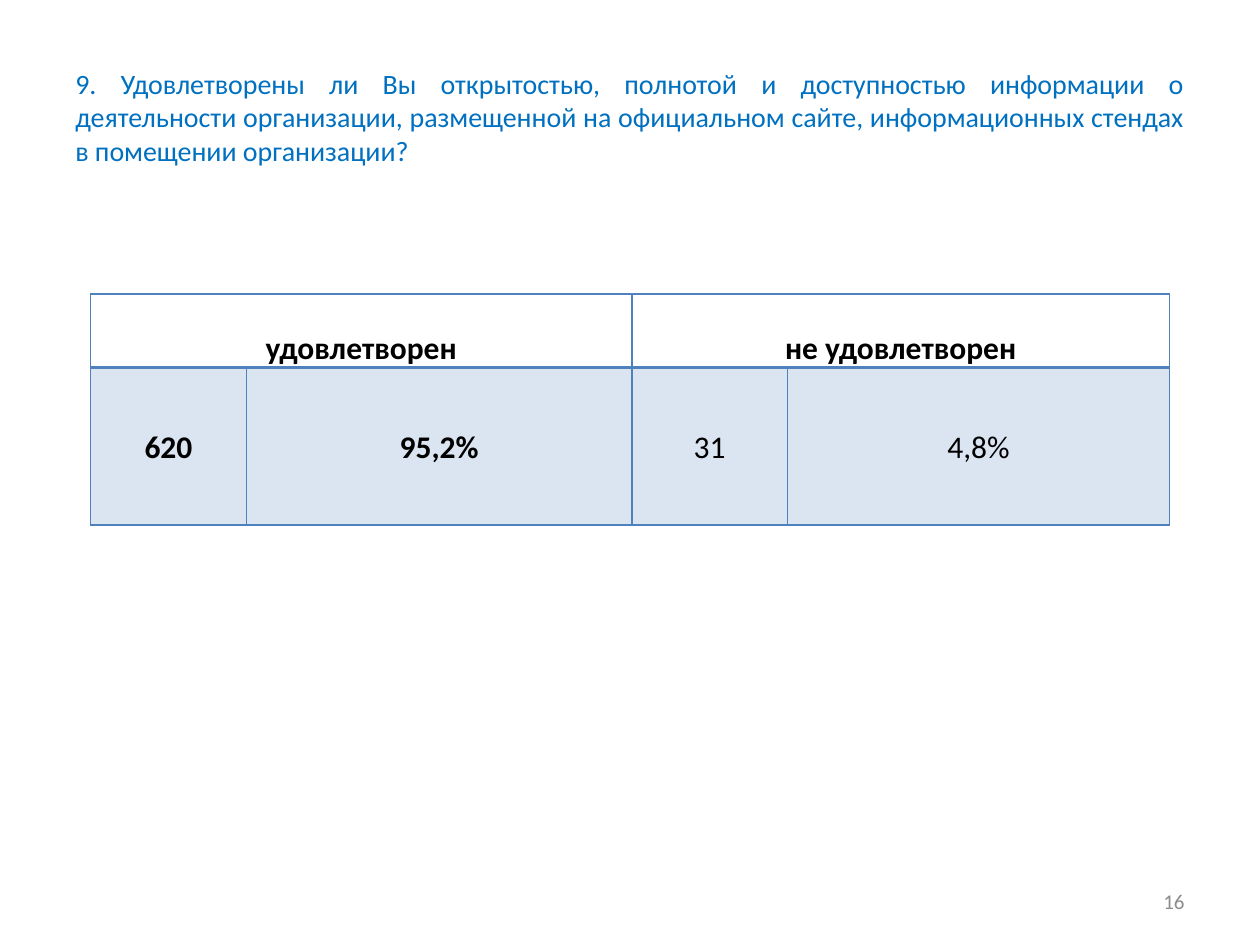
from lxml import etree
from pptx import Presentation
from pptx.dml.color import RGBColor
from pptx.enum.text import MSO_ANCHOR, PP_ALIGN
from pptx.oxml.ns import qn
from pptx.util import Pt

LEFT, MID, RIGHT = PP_ALIGN.JUSTIFY, PP_ALIGN.CENTER, PP_ALIGN.RIGHT
CENTER, BOTTOM = MSO_ANCHOR.MIDDLE, MSO_ANCHOR.BOTTOM
BLUE = RGBColor(0x00, 0x70, 0xC0)
STEEL = RGBColor(0x4F, 0x81, 0xBD)
GREY = RGBColor(0x8C, 0x8C, 0x8C)
BLACK = RGBColor(0, 0, 0)


def write(frame, text, size=18, color=BLACK, bold=False, align=MID,
          font="Calibri", line=None, after=None):
    """Fill a text frame with one formatted paragraph."""
    par = frame.paragraphs[0]
    par.alignment = align
    par.line_spacing = line
    par.space_after = None if after is None else Pt(after)
    run = par.add_run()
    run.text = text
    run.font.name = font
    run.font.size = Pt(size)
    run.font.bold = bold
    run.font.color.rgb = color


def edge(cell, widths):
    """Draw cell borders; widths are left, right, top, bottom."""
    props = cell._tc.get_or_add_tcPr()
    for spot, (side, width) in enumerate(zip("LRTB", widths)):
        line = etree.Element(qn(f"a:ln{side}"), w=str(Pt(width)))
        fill = etree.SubElement(line, qn("a:solidFill"))
        etree.SubElement(fill, qn("a:srgbClr"), val=str(STEEL))
        props.insert(spot, line)


def tint(cell, color, alpha):
    """Fill a cell with a colour at the given percent opacity."""
    cell.fill.solid()
    cell.fill.fore_color.rgb = color
    tone = cell._tc.tcPr.find(f"{qn('a:solidFill')}/{qn('a:srgbClr')}")
    etree.SubElement(tone, qn("a:alpha"), val=str(alpha * 1000))


class Deck:
    def __init__(self, slide):
        self.slide = slide
        self.pad = Pt(5)

    def text(self, text, left, top, width, height, **style):
        box = self.slide.shapes.add_textbox(
            Pt(left), Pt(top), Pt(width), Pt(height))
        frame = box.text_frame
        frame.word_wrap = True
        frame.vertical_anchor = CENTER
        write(frame, text, **style)

    def cell(self, cell, text, anchor, bold):
        cell.vertical_anchor = anchor
        cell.margin_left = cell.margin_right = self.pad
        cell.margin_top = cell.margin_bottom = 0
        write(cell.text_frame, text, bold=bold, line=1.07, after=8)

    def table(self, left, top, cols, rows, heads, values):
        grid = self.slide.shapes.add_table(
            len(rows), len(cols), Pt(left), Pt(top),
            Pt(sum(cols)), Pt(sum(rows))).table
        for col, width in zip(grid.columns, cols):
            col.width = Pt(width)
        for row, height in zip(grid.rows, rows):
            row.height = Pt(height)

        # Borders and fills
        for col in range(len(cols)):
            head, body = grid.cell(0, col), grid.cell(1, col)
            head.fill.background()
            edge(head, (1, 1, 1, 2))
            tint(body, STEEL, 20)
            edge(body, (1, 1, 2, 1))

        # Each heading spans a count and its share
        for num, name in enumerate(heads):
            head = grid.cell(0, num * 2)
            head.merge(grid.cell(0, num * 2 + 1))
            self.cell(head, name, BOTTOM, True)
        for col, (value, bold) in enumerate(values):
            self.cell(grid.cell(1, col), value, CENTER, bold)


def main():
    prs = Presentation()
    prs.slide_width, prs.slide_height = Pt(720), Pt(540)
    deck = Deck(prs.slides.add_slide(prs.slide_layouts[6]))

    # Question
    deck.text("9. Удовлетворены ли Вы открытостью, полнотой и доступностью "
              "информации о деятельности организации, размещенной на "
              "официальном сайте, информационных стендах в помещении "
              "организации?",
              36, 21.6, 648, 90, size=16, color=BLUE, align=LEFT)

    # Answers
    deck.table(51.8, 168, (89, 220.3, 89, 218.3), (42, 90),
               ("удовлетворен", "не удовлетворен"),
               (("620", True), ("95,2%", True),
                ("31", False), ("4,8%", False)))

    # Page number
    deck.text("16", 516, 500.5, 168, 28.8, size=12, color=GREY, align=RIGHT)

    prs.save("out.pptx")


if __name__ == "__main__":
    main()
